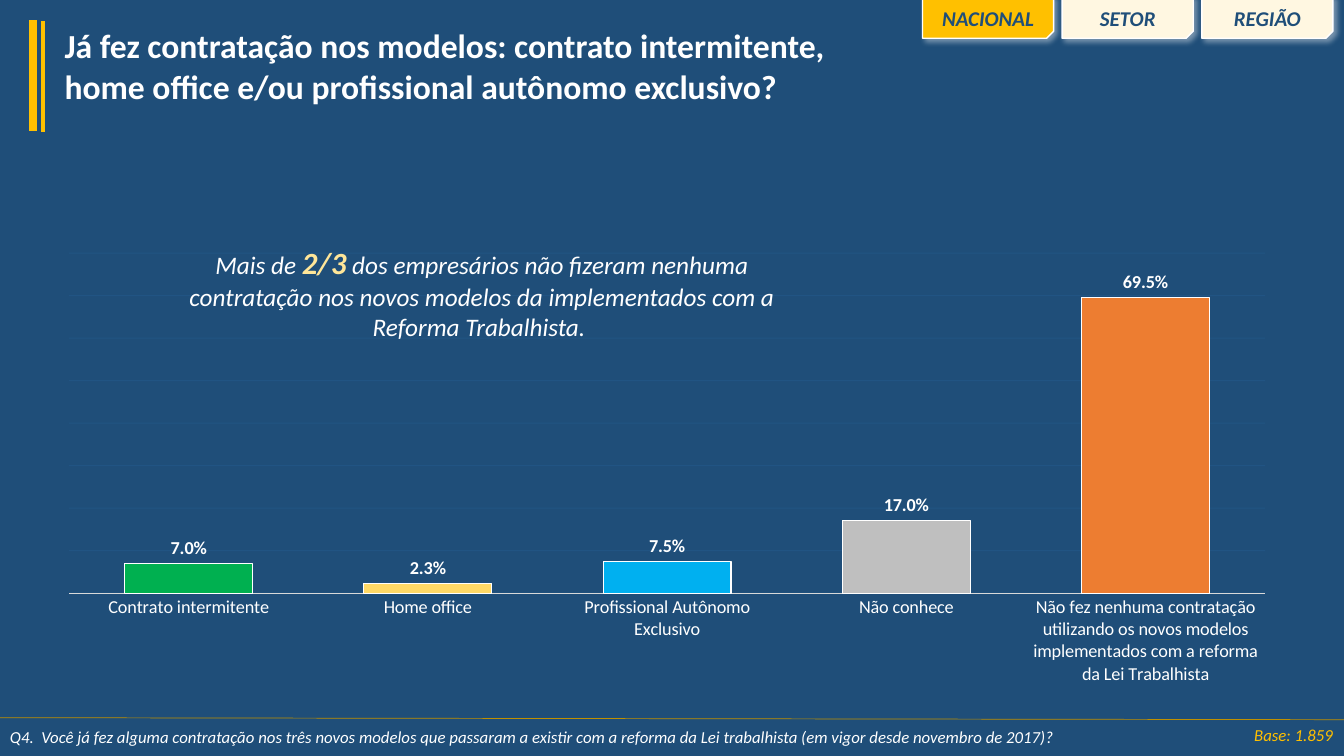
from dataclasses import dataclass

from lxml.etree import SubElement
from pptx import Presentation
from pptx.chart.data import CategoryChartData
from pptx.dml.color import RGBColor
from pptx.enum.chart import XL_CHART_TYPE as ChartType
from pptx.enum.chart import XL_LABEL_POSITION as LabelPosition
from pptx.enum.chart import XL_TICK_MARK as TickMark
from pptx.enum.shapes import MSO_CONNECTOR as Connector
from pptx.enum.shapes import MSO_SHAPE as ShapeType
from pptx.enum.text import MSO_ANCHOR as Anchor
from pptx.enum.text import MSO_AUTO_SIZE as AutoSize
from pptx.enum.text import PP_ALIGN as Align
from pptx.oxml import parse_xml
from pptx.oxml.ns import nsdecls, qn
from pptx.slide import Slide
from pptx.text.text import Font, TextFrame
from pptx.util import Inches, Pt

NAVY = RGBColor(0x1F, 0x4E, 0x79)
WHITE = RGBColor(0xFF, 0xFF, 0xFF)
GOLD = RGBColor(0xFF, 0xC0, 0x00)
DARK_GOLD = RGBColor(0xBF, 0x90, 0x00)
PALE_GOLD = RGBColor(0xFF, 0xE6, 0x99)
CREAM = RGBColor(0xFF, 0xF7, 0xE1)
AXIS_GREY = RGBColor(0xD9, 0xD9, 0xD9)
GRID_BLUE = RGBColor(0x2E, 0x75, 0xB6)
GREEN = RGBColor(0x00, 0xB0, 0x50)
YELLOW = RGBColor(0xFF, 0xD9, 0x66)
SKY = RGBColor(0x00, 0xB0, 0xF0)
GREY = RGBColor(0xBF, 0xBF, 0xBF)
ORANGE = RGBColor(0xED, 0x7D, 0x31)


@dataclass
class Rule:
    start: tuple[float, float]
    end: tuple[float, float]
    color: RGBColor
    width: float


@dataclass
class Label:
    text: str
    place: tuple[float, float, float, float]
    size: float
    color: RGBColor
    align: Align = Align.LEFT
    anchor: Anchor = Anchor.TOP
    bold: bool = False


@dataclass
class Tab:
    text: str
    fill: RGBColor


@dataclass
class Answer:
    text: str
    share: float
    color: RGBColor


RULES = [
    Rule((0.33, 0.2), (0.33, 1.3), GOLD, 6),
    Rule((0.43, 0.21), (0.43, 1.31), GOLD, 3),
    Rule((-0.02, 7.12), (13.33, 7.14), DARK_GOLD, 0.5),
]
FOOTERS = [
    Label("Q4.  Você já fez alguma contratação nos três novos modelos que passaram a existir "
          "com a reforma da Lei trabalhista (em vigor desde novembro de 2017)?",
          (0, 7.16, 13.33, 0.3), 12, WHITE),
    Label("Base: 1.859", (12.17, 7.12, 1.15, 0.34), 12, GOLD, Align.RIGHT, Anchor.MIDDLE),
]
TABS = [Tab("NACIONAL", GOLD), Tab("SETOR", CREAM), Tab("REGIÃO", CREAM)]
TAB_LEFT, TAB_STEP, TAB_WIDTH = 9.15, 1.385, 1.3
ANSWERS = [
    Answer("Contrato intermitente", 0.07, GREEN),
    Answer("Home office", 0.023, YELLOW),
    Answer("Profissional Autônomo Exclusivo", 0.075, SKY),
    Answer("Não conhece", 0.17, GREY),
    Answer("Não fez nenhuma contratação utilizando os novos modelos implementados com a "
           "reforma da Lei Trabalhista", 0.695, ORANGE),
]


def style(font: Font, size: float, color: RGBColor, bold: bool = False, italic: bool = False) -> None:
    font.name = "Calibri"
    font.size = Pt(size)
    font.bold = bold
    font.italic = italic
    font.color.rgb = color


def add_rule(page: Slide, rule: Rule) -> None:
    ends = [Inches(value) for value in (*rule.start, *rule.end)]
    line = page.shapes.add_connector(Connector.STRAIGHT, *ends)
    line.line.color.rgb = rule.color
    line.line.width = Pt(rule.width)
    SubElement(line._element.spPr, qn("a:effectLst"))


def add_box(page: Slide, place: tuple[float, float, float, float]) -> TextFrame:
    frame = page.shapes.add_textbox(*[Inches(value) for value in place]).text_frame
    frame.word_wrap = True
    return frame


def add_label(page: Slide, label: Label) -> None:
    frame = add_box(page, label.place)
    frame.vertical_anchor = label.anchor
    para = frame.paragraphs[0]
    para.text = label.text
    para.alignment = label.align
    style(para.font, label.size, label.color, label.bold, italic=True)


def add_tab(page: Slide, tab: Tab, left: float) -> None:
    shape = page.shapes.add_shape(ShapeType.SNIP_1_RECTANGLE, Inches(left), Inches(-0.04),
                                  Inches(TAB_WIDTH), Inches(0.42))
    shape.fill.solid()
    shape.fill.fore_color.rgb = tab.fill
    shape.line.color.rgb = WHITE
    shape.line.width = Pt(1)
    properties = shape._element.spPr
    properties.find(qn("a:xfrm")).set("flipV", "1")
    properties.append(parse_xml(
        f'<a:effectLst {nsdecls("a")}><a:outerShdw blurRad="{Pt(4)}" dist="{Pt(3)}" dir="2700000" '
        f'algn="tl" rotWithShape="0"><a:srgbClr val="{WHITE}"><a:alpha val="40000"/></a:srgbClr>'
        '</a:outerShdw></a:effectLst>'))
    add_label(page, Label(tab.text, (left, 0.01, TAB_WIDTH, 0.35), 15, NAVY, Align.CENTER, bold=True))


def add_title(page: Slide) -> None:
    title = page.shapes.title
    title.left, title.top, title.width, title.height = map(Inches, (0.54, 0.2, 7.91, 0.91))
    frame = title.text_frame
    frame.text = ("Já fez contratação nos modelos: contrato intermitente, home office e/ou "
                  "profissional autônomo exclusivo?")
    frame.auto_size = AutoSize.NONE
    frame.word_wrap = True
    frame.vertical_anchor = Anchor.TOP
    para = frame.paragraphs[0]
    para.alignment = Align.LEFT
    style(para.font, 24, WHITE, bold=True)


def add_answer_chart(page: Slide) -> None:
    data = CategoryChartData(number_format="0.0%")
    data.categories = [answer.text for answer in ANSWERS]
    data.add_series("Series 1", [answer.share for answer in ANSWERS])
    chart = page.shapes.add_chart(ChartType.COLUMN_CLUSTERED, Inches(0.68), Inches(2.37),
                                  Inches(12.11), Inches(4.75), data).chart
    chart.has_legend = False
    chart.has_title = False
    style(chart.font, 10, WHITE)

    categories = chart.category_axis
    categories.major_tick_mark = TickMark.NONE
    categories.format.line.color.rgb = AXIS_GREY
    categories.format.line.width = Pt(0.75)
    style(categories.tick_labels.font, 13, WHITE)

    values = chart.value_axis
    values.minimum_scale, values.maximum_scale, values.major_unit = 0, 0.8, 0.1
    values.visible = False
    grid = values.major_gridlines.format.line
    grid.color.rgb = GRID_BLUE
    grid.width = Pt(0.75)
    for color in values.major_gridlines._xAx.iter(qn("a:srgbClr")):
        if color.get("val") == str(GRID_BLUE):
            SubElement(color, qn("a:alpha")).set("val", "17000")

    plot = chart.plots[0]
    plot.gap_width, plot.overlap = 87, -37
    plot.vary_by_categories = False
    plot.has_data_labels = True
    labels = plot.data_labels
    labels.show_value = True
    labels.number_format, labels.number_format_is_linked = "0.0%", False
    labels.position = LabelPosition.OUTSIDE_END
    style(labels.font, 13, WHITE, bold=True)
    for index, answer in enumerate(ANSWERS):
        column = plot.series[0].points[index].format
        column.fill.solid()
        column.fill.fore_color.rgb = answer.color
        column.line.color.rgb = WHITE
        column.line.width = Pt(0.75)

    area = chart._chartSpace.chart.plotArea
    for layout in area.findall(qn("c:layout")):
        area.remove(layout)
    area.insert(0, parse_xml(
        f'<c:layout {nsdecls("c")}><c:manualLayout><c:layoutTarget val="inner"/>'
        '<c:xMode val="edge"/><c:yMode val="edge"/><c:x val="0"/><c:y val="0.03"/>'
        '<c:w val="0.98"/><c:h val="0.71"/></c:manualLayout></c:layout>'))


def add_finding(page: Slide) -> None:
    para = add_box(page, (1.5, 2.37, 6.56, 1.08)).paragraphs[0]
    para.alignment = Align.CENTER
    for text, size, color, bold in (
        ("Mais de ", 18, WHITE, False),
        ("2/3", 22, PALE_GOLD, True),
        (" dos empresários não fizeram nenhuma contratação nos novos modelos da implementados "
         "com a Reforma Trabalhista. ", 18, WHITE, False),
    ):
        span = para.add_run()
        span.text = text
        style(span.font, size, color, bold, italic=True)


def main() -> None:
    deck = Presentation()
    deck.slide_width, deck.slide_height = Inches(13.33), Inches(7.5)
    page = deck.slides.add_slide(deck.slide_layouts.get_by_name("Title Only"))
    page.background.fill.solid()
    page.background.fill.fore_color.rgb = NAVY
    add_title(page)
    for rule in RULES:
        add_rule(page, rule)
    for footer in FOOTERS:
        add_label(page, footer)
    for index, tab in enumerate(TABS):
        add_tab(page, tab, TAB_LEFT + index * TAB_STEP)
    add_answer_chart(page)
    add_finding(page)
    deck.save("out.pptx")


if __name__ == "__main__":
    main()
